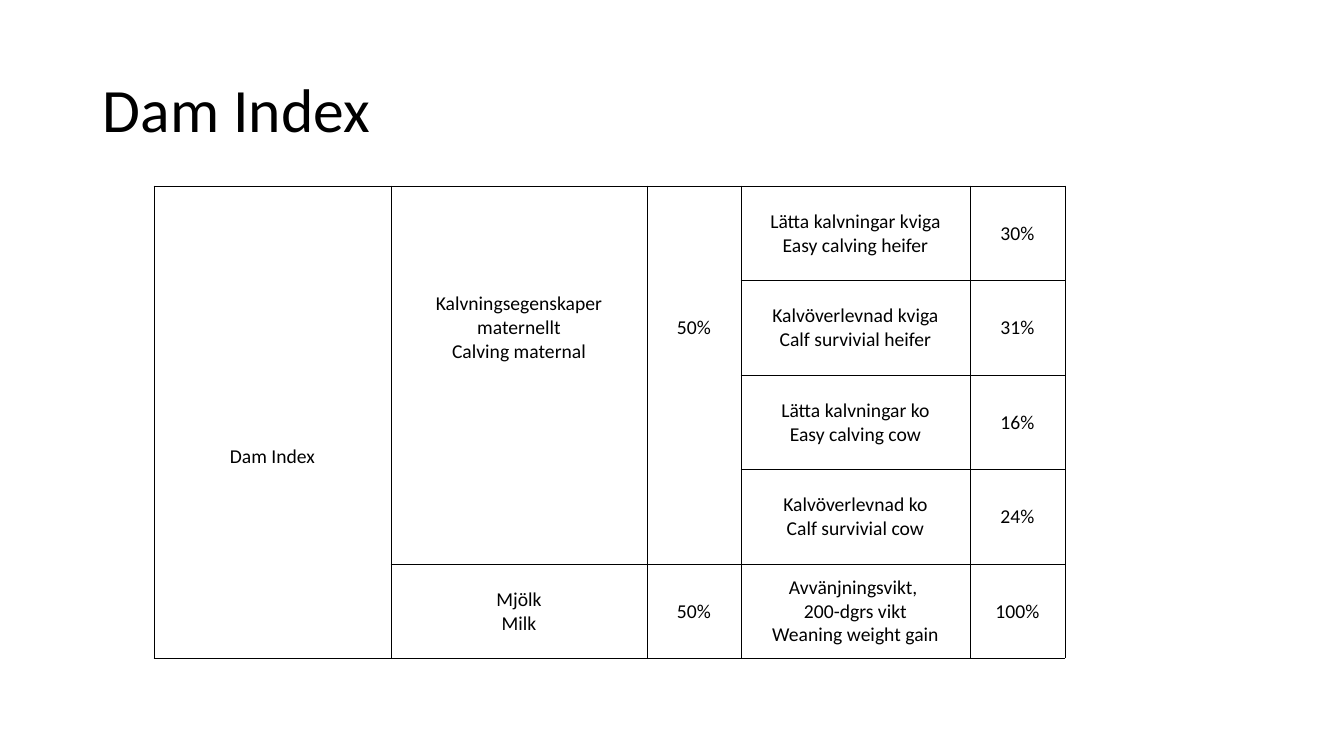
import pptx
import pptx.util
import pptx.dml.color
import pptx.enum.text
import pptx.oxml
import pptx.oxml.ns
import lxml.etree

SCALE = 914400 / 100.8  # EMU in one px
BLACK = "000000"


def px(length):
    return pptx.util.Emu(round(length * SCALE))


def style_text(frame, size, color):
    for para in frame.paragraphs:
        for span in para.runs:
            span.font.name = "Calibri"
            span.font.size = pptx.util.Pt(size)
            span.font.color.rgb = pptx.dml.color.RGBColor.from_string(color)


deck = pptx.Presentation()
deck.slide_width, deck.slide_height = px(1344), px(756)
page = deck.slides.add_slide(deck.slide_layouts[6])

# Title
title = page.shapes.add_textbox(px(93), px(40), px(1159), px(146))
title.text_frame.word_wrap = True
title.text_frame.vertical_anchor = pptx.enum.text.MSO_ANCHOR.MIDDLE
title.text_frame.text = "Dam Index"
title.text_frame.paragraphs[0].line_spacing = 0.9
style_text(title.text_frame, 44, BLACK)

# Table content, row by row
rows = [
    ["", "", "", "Lätta kalvningar kviga\nEasy calving heifer", "30%"],
    ["", "Kalvningsegenskaper maternellt\nCalving maternal", "50%",
     "Kalvöverlevnad kviga\nCalf survivial heifer", "31%"],
    ["Dam Index", "", "", "Lätta kalvningar ko\nEasy calving cow", "16%"],
    ["", "", "", "Kalvöverlevnad ko\nCalf survivial cow", "24%"],
    ["", "Mjölk\nMilk", "50%",
     "Avvänjningsvikt, \n200-dgrs vikt\nWeaning weight gain", "100%"],
]
column_edges = [154, 391, 647, 741, 970, 1065]
row_edges = [186, 280, 375, 469, 564, 658]

# Rows above which each column has a line; the last is the bottom edge
every_row = [0, 1, 2, 3, 4, 5]
ruled_rows = [[0, 5], [0, 4, 5], [0, 4, 5], every_row, every_row]

# Table grid
table = page.shapes.add_table(
    5, 5, px(column_edges[0]), px(row_edges[0]),
    px(column_edges[-1] - column_edges[0]), px(row_edges[-1] - row_edges[0])).table
table.first_row = table.horz_banding = False
for index in range(5):
    table.columns[index].width = px(column_edges[index + 1] - column_edges[index])
    table.rows[index].height = px(row_edges[index + 1] - row_edges[index])

# Cells
for row, texts in enumerate(rows):
    for column, text in enumerate(texts):
        cell = table.cell(row, column)
        cell.margin_left = cell.margin_right = cell.margin_top = px(1)
        cell.margin_bottom = 0
        cell.vertical_anchor = (pptx.enum.text.MSO_ANCHOR.BOTTOM if column == 0
                                else pptx.enum.text.MSO_ANCHOR.MIDDLE)
        cell.text_frame.text = text
        for para in cell.text_frame.paragraphs:
            para.alignment = pptx.enum.text.PP_ALIGN.CENTER
        style_text(cell.text_frame, 14, BLACK)

        # Borders, left open inside the tall blocks
        properties = cell._tc.get_or_add_tcPr()
        sides = {"lnL": True, "lnR": True,
                 "lnT": row in ruled_rows[column],
                 "lnB": row + 1 in ruled_rows[column]}
        for side, visible in sides.items():
            line = lxml.etree.SubElement(
                properties, pptx.oxml.ns.qn("a:" + side), w=str(pptx.util.Pt(0.5)))
            fill = lxml.etree.SubElement(
                line, pptx.oxml.ns.qn("a:solidFill" if visible else "a:noFill"))
            if visible:
                lxml.etree.SubElement(fill, pptx.oxml.ns.qn("a:srgbClr"), val=BLACK)
        cell.fill.background()

deck.save("out.pptx")
